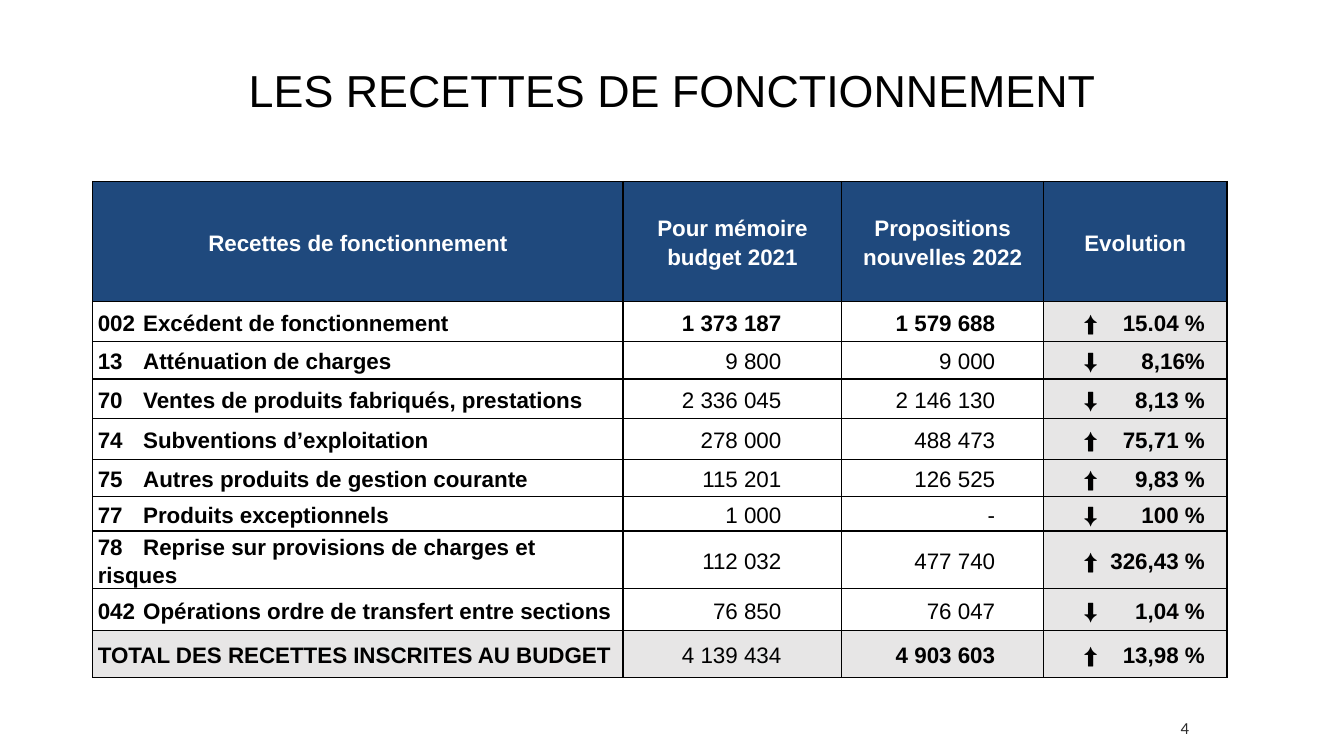
from itertools import product

from lxml.etree import SubElement
from pptx import Presentation
from pptx.dml.color import RGBColor
from pptx.enum.text import MSO_ANCHOR as Anchor, MSO_AUTO_SIZE as AutoSize, PP_ALIGN as Align
from pptx.oxml import parse_xml
from pptx.oxml.ns import nsdecls, qn
from pptx.util import Inches, Pt

TITLE = "LES RECETTES DE FONCTIONNEMENT"
PAGE_NUMBER = 4
HEADINGS = (
    "Recettes de fonctionnement",
    "Pour mémoire budget 2021",
    "Propositions nouvelles 2022",
    "Evolution",
)
RECEIPTS = [
    ("002\tExcédent de fonctionnement", "1 373 187", "1 579 688", "⬆\t15.04 %"),
    ("13\tAtténuation de charges", "9 800", "9 000", "⬇\t8,16%"),
    ("70\tVentes de produits fabriqués, prestations", "2 336 045", "2 146 130", "⬇\t8,13 %"),
    ("74\tSubventions d’exploitation", "278 000", "488 473", "⬆\t75,71 %"),
    ("75\tAutres produits de gestion courante", "115 201", "126 525", "⬆\t9,83 %"),
    ("77\tProduits exceptionnels", "1 000", "-", "⬇\t100 %"),
    ("78\tReprise sur provisions de charges et risques", "112 032", "477 740", "⬆\t326,43 %"),
    ("042\tOpérations ordre de transfert entre sections", "76 850", "76 047", "⬇\t1,04 %"),
    ("TOTAL DES RECETTES INSCRITES AU BUDGET", "4 139 434", "4 903 603", "⬆\t13,98 %"),
]
BOLD_AMOUNTS = {(1, 1), (1, 2), (9, 2)}

THEME = {
    "font": "Arial",
    "number_font": "Calibri",
    "title_size": 32,
    "table_size": 16,
    "number_size": 12,
    "navy": "1F497D",
    "grey": "E7E6E6",
    "white": "FFFFFF",
    "black": "000000",
    "number_color": "2C2C2C",
    "border_pt": 1,
}
TITLE_BOX = (1.32, 0.32, 10.7, 1.22)
NUMBER_BOX = (11.66, 7.02, 1.03, 0.4)
TABLE_ORIGIN = (0.92, 1.8)
COLUMN_WIDTHS = (5.26, 2.17, 2, 1.82)
ROW_HEIGHTS = (1.19, 0.4, 0.37, 0.39, 0.41, 0.37, 0.34, 0.57, 0.42, 0.46)
COLUMN_FORMATS = (
    {"align": Align.LEFT, "left": 0.05, "right": 0.05, "tab": (0.45, "l")},
    {"align": Align.RIGHT, "left": 0.05, "right": 0.6, "tab": None},
    {"align": Align.RIGHT, "left": 0.05, "right": 0.48, "tab": None},
    {"align": Align.LEFT, "left": 0.4, "right": 0.05, "tab": (1.2, "r")},
)
HEADING_FORMAT = {"align": Align.CENTER, "left": 0.05, "right": 0.05, "tab": None}


def apply(target, values):
    for attribute, value in values.items():
        setattr(target, attribute, value)


def style_font(font, name, size, color, bold=False):
    apply(font, {"name": name, "size": Pt(size), "bold": bold})
    font.color.rgb = RGBColor.from_string(color)


def add_borders(cell):
    properties = cell._tc.get_or_add_tcPr()
    for side in "LRTB":
        properties.append(parse_xml(
            f'<a:ln{side} {nsdecls("a")} w="{Pt(THEME["border_pt"])}"><a:solidFill>'
            f'<a:srgbClr val="{THEME["black"]}"/></a:solidFill></a:ln{side}>'))


def add_tab(paragraph, position, alignment):
    stops = SubElement(paragraph._p.get_or_add_pPr(), qn("a:tabLst"))
    SubElement(stops, qn("a:tab"), pos=str(Inches(position)), algn=alignment)


def fill_cell(cell, text, row, column):
    heading = row == 0
    layout = HEADING_FORMAT if heading else COLUMN_FORMATS[column]
    add_borders(cell)
    if heading:
        background = THEME["navy"]
    elif column == 3 or row == len(RECEIPTS):
        background = THEME["grey"]
    else:
        background = THEME["white"]
    cell.fill.solid()
    cell.fill.fore_color.rgb = RGBColor.from_string(background)
    apply(cell, {
        "text": text,
        "vertical_anchor": Anchor.MIDDLE,
        "margin_left": Inches(layout["left"]),
        "margin_right": Inches(layout["right"]),
        "margin_top": 0,
        "margin_bottom": 0,
    })
    paragraph = cell.text_frame.paragraphs[0]
    apply(paragraph, {"alignment": layout["align"], "line_spacing": 1.15})
    if layout["tab"]:
        add_tab(paragraph, *layout["tab"])
    bold = heading or column in (0, 3) or (row, column) in BOLD_AMOUNTS
    color = THEME["white"] if heading else THEME["black"]
    style_font(paragraph.runs[0].font, THEME["font"], THEME["table_size"], color, bold)


def add_title(slide):
    title = slide.shapes.title
    apply(title, dict(zip(("left", "top", "width", "height"), map(Inches, TITLE_BOX))))
    apply(title.text_frame, {
        "text": TITLE,
        "word_wrap": True,
        "auto_size": AutoSize.NONE,
        "vertical_anchor": Anchor.MIDDLE,
    })
    paragraph = title.text_frame.paragraphs[0]
    apply(paragraph, {"alignment": Align.CENTER, "line_spacing": 0.85})
    style_font(paragraph.runs[0].font, THEME["font"], THEME["title_size"], THEME["black"])


def add_receipts(slide):
    rows = [HEADINGS, *RECEIPTS]
    size = (sum(COLUMN_WIDTHS), sum(ROW_HEIGHTS))
    receipts = slide.shapes.add_table(
        len(rows), len(HEADINGS), *map(Inches, TABLE_ORIGIN + size)).table
    apply(receipts, {"first_row": False, "horz_banding": False})
    for column, width in zip(receipts.columns, COLUMN_WIDTHS):
        column.width = Inches(width)
    for row, height in zip(receipts.rows, ROW_HEIGHTS):
        row.height = Inches(height)
    for row, column in product(range(len(rows)), range(len(HEADINGS))):
        fill_cell(receipts.cell(row, column), rows[row][column], row, column)


def add_page_number(slide):
    frame = slide.shapes.add_textbox(*map(Inches, NUMBER_BOX)).text_frame
    apply(frame, {
        "word_wrap": True,
        "vertical_anchor": Anchor.MIDDLE,
        "margin_left": Inches(0.05),
    })
    run = frame.paragraphs[0].add_run()
    run.text = str(PAGE_NUMBER)
    style_font(run.font, THEME["number_font"], THEME["number_size"], THEME["number_color"])


def main():
    deck = Presentation()
    apply(deck, {"slide_width": Inches(13.33), "slide_height": Inches(7.5)})
    slide = deck.slides.add_slide(deck.slide_layouts.get_by_name("Title Only"))
    add_title(slide)
    add_receipts(slide)
    add_page_number(slide)
    deck.save("out.pptx")


if __name__ == "__main__":
    main()
